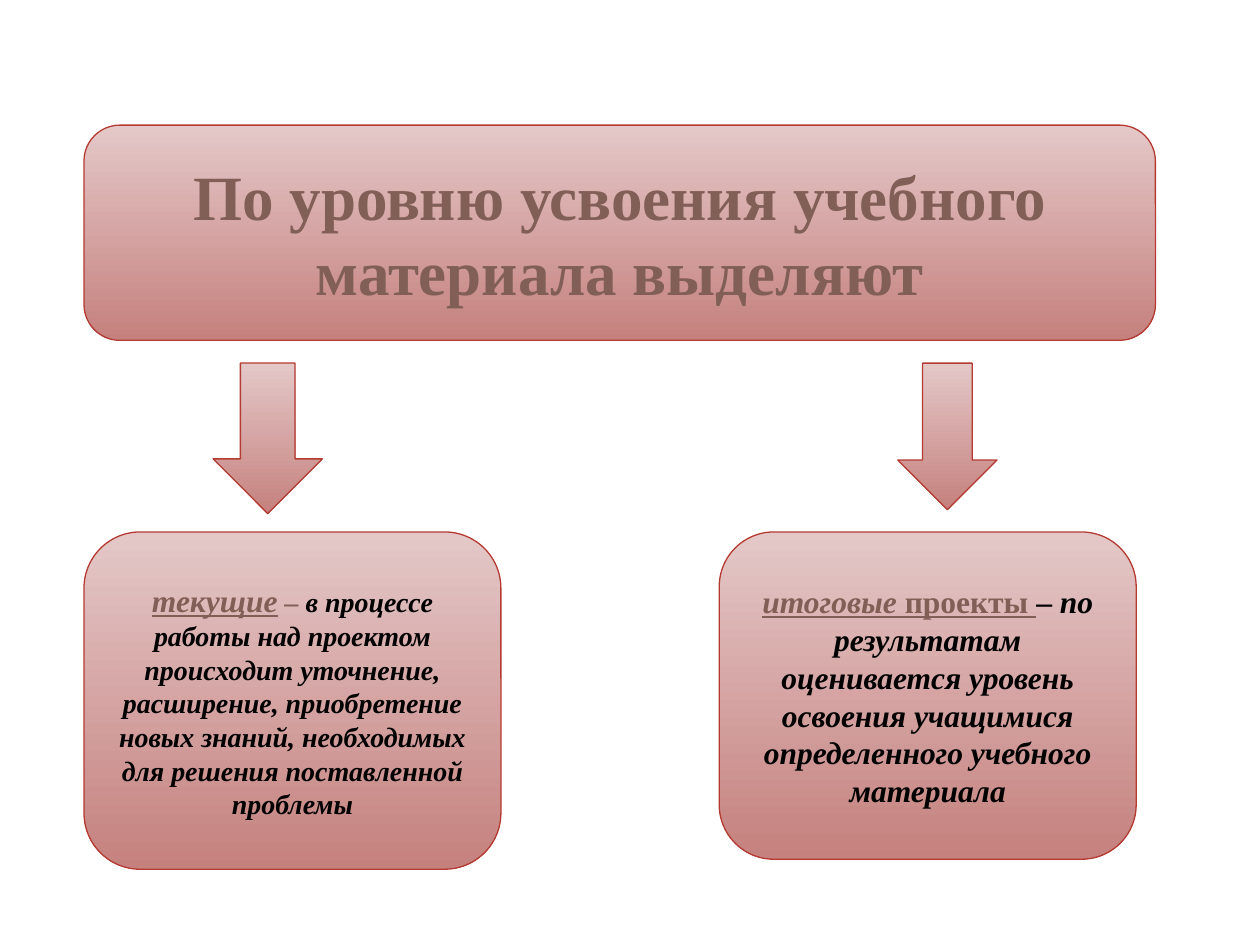
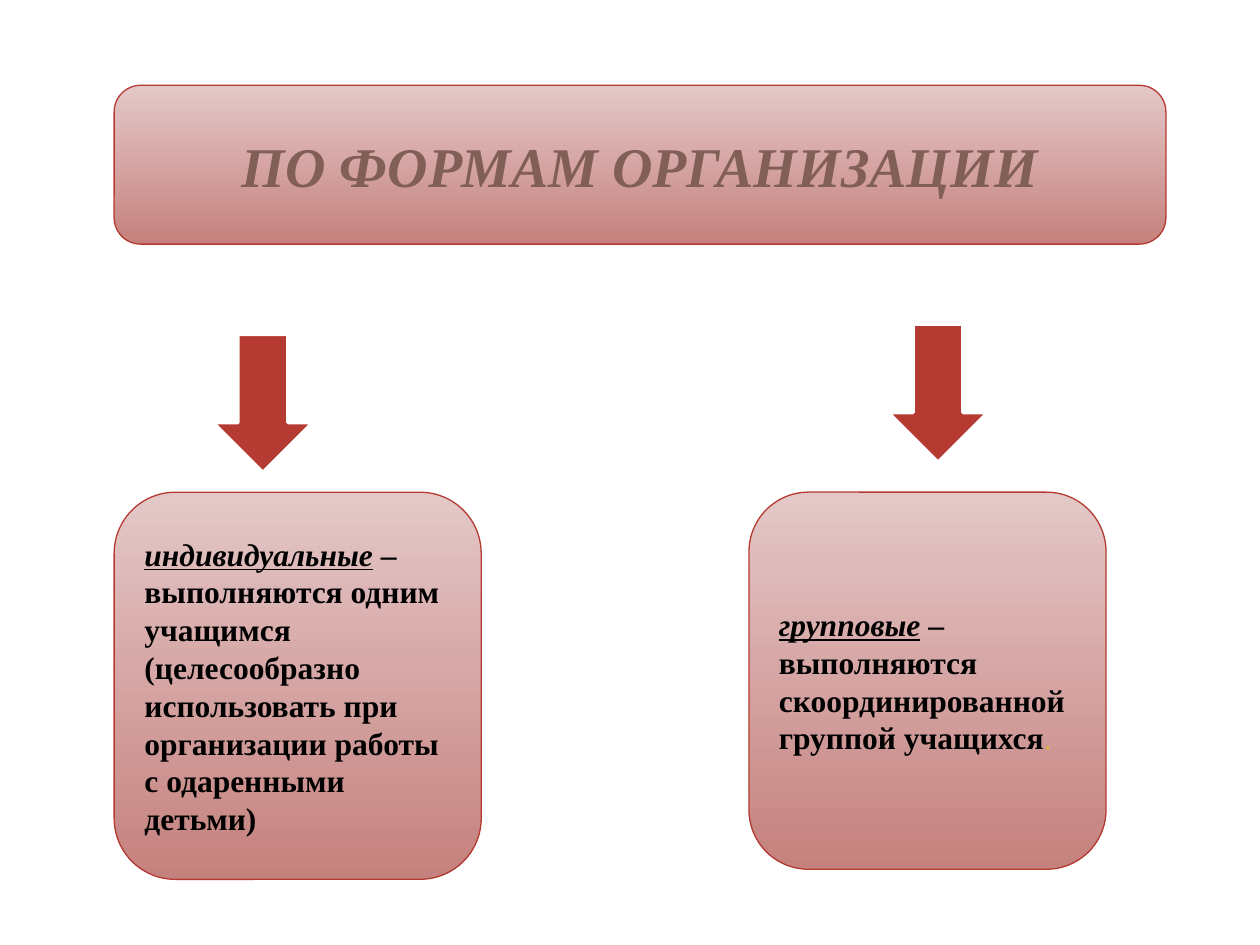
from dataclasses import dataclass, field

from pptx import Presentation
from pptx.dml.color import RGBColor
from pptx.enum import shapes, text
from pptx.util import Pt

# Shared look
FONT = "Times New Roman"
BLACK, WHITE, BROWN, RED, GOLD = "000000", "FFFFFF", "815F56", "B53A31", "D9B247"
GRADIENT = ("E4C8C8", "C5817E")
ROUND = shapes.MSO_SHAPE.ROUNDED_RECTANGLE
ARROW = shapes.MSO_SHAPE.DOWN_ARROW
CENTER, LEFT = text.PP_ALIGN.CENTER, text.PP_ALIGN.LEFT


@dataclass
class Box:
    left: float
    top: float
    width: float
    height: float

    def lengths(self) -> tuple:
        return Pt(self.left), Pt(self.top), Pt(self.width), Pt(self.height)


@dataclass
class Run:
    text: str
    size: float = 18
    color: str = BLACK
    bold: bool = True
    italic: bool = False
    underline: bool = False


@dataclass
class Branch:
    arrow: Box
    card: Box
    runs: list[Run]


@dataclass
class Scheme:
    heading: Run
    heading_box: Box
    branches: list[Branch] = field(default_factory=list)
    align: text.PP_ALIGN = CENTER
    solid_arrows: bool = False


def rgb(value: str) -> RGBColor:
    return RGBColor.from_string(value)


def add_run(p, content: str, *, size: float, color: str, bold: bool,
            italic: bool, underline: bool) -> None:
    r = p.add_run()
    r.text = content
    f = r.font
    f.name, f.size, f.color.rgb = FONT, Pt(size), rgb(color)
    f.bold, f.italic, f.underline = bold, italic, underline


def write(sp, runs: list[Run], align: text.PP_ALIGN) -> None:
    tf = sp.text_frame
    tf.word_wrap = True
    tf.auto_size = text.MSO_AUTO_SIZE.NONE
    tf.vertical_anchor = text.MSO_ANCHOR.MIDDLE
    p = tf.paragraphs[0]
    p.alignment = align
    for run in runs:
        add_run(p, run.text, size=run.size, color=run.color, bold=run.bold,
                italic=run.italic, underline=run.underline)


def add_panel(s, kind: shapes.MSO_SHAPE, box: Box, solid: bool = False):
    """Add a gradient shape with a red outline, or a solid red one edged in white."""
    sp = s.shapes.add_shape(kind, *box.lengths())
    sp.shadow.inherit = False
    if solid:
        sp.fill.solid()
        sp.fill.fore_color.rgb = rgb(RED)
    else:
        sp.fill.gradient()
        sp.fill.gradient_angle = 270
        for stop, color, position in zip(sp.fill.gradient_stops, GRADIENT, (0, 1)):
            stop.color.rgb, stop.position = rgb(color), position
    sp.line.color.rgb = rgb(WHITE if solid else RED)
    sp.line.width = Pt(2 if solid else 0.75)
    return sp


def add_heading(s, run: Run, box: Box) -> None:
    panel = add_panel(s, ROUND, box)
    title = s.shapes.title
    title.left, title.top, title.width, title.height = box.lengths()
    write(title, [run], CENTER)
    title._element.addprevious(panel._element)  # panel goes behind the title


def add_scheme(prs, scheme: Scheme) -> None:
    s = prs.slides.add_slide(prs.slide_layouts[5])
    add_heading(s, scheme.heading, scheme.heading_box)
    for branch in scheme.branches:
        add_panel(s, ARROW, branch.arrow, scheme.solid_arrows)
        write(add_panel(s, ROUND, branch.card), branch.runs, scheme.align)


SCHEMES = [
    # Levels of mastering the material
    Scheme(
        Run("По уровню усвоения учебного материала выделяют", 36, BROWN),
        Box(48, 71.5, 612.25, 123),
        [
            Branch(Box(121.75, 207.5, 62.5, 86), Box(48, 304, 238.25, 192.75), [
                Run("текущие", color=BROWN, italic=True, underline=True),
                Run(" ", 16, BROWN),
                Run("–", 16, BROWN, italic=True),
                Run(" в процессе работы над проектом происходит уточнение, "
                    "расширение, приобретение новых знаний, необходимых для "
                    "решения поставленной проблемы", 16, italic=True),
            ]),
            Branch(Box(513, 207.5, 56.75, 83.75), Box(411, 304, 238.25, 187), [
                Run("итоговые", color=BROWN, italic=True, underline=True),
                Run(" проекты ", color=BROWN, underline=True),
                Run("– "),
                Run("по результатам оценивается уровень освоения учащимися "
                    "определенного учебного материала", italic=True),
            ]),
        ],
    ),
    # Forms of organisation
    Scheme(
        Run("ПО ФОРМАМ ОРГАНИЗАЦИИ", 32, BROWN, italic=True),
        Box(65.25, 48.75, 601, 90.75),
        [
            Branch(Box(121.75, 191, 57, 79), Box(65.25, 281.25, 209.75, 221.25), [
                Run("индивидуальные", italic=True, underline=True),
                Run(" – выполняются одним учащимся (целесообразно использовать "
                    "при организации работы с одаренными детьми)"),
            ]),
            Branch(Box(507.5, 185.25, 57, 79), Box(428, 281.25, 204, 215.5), [
                Run("групповые", italic=True, underline=True),
                Run(" – выполняются скоординированной группой учащихся"),
                Run(".", color=GOLD, bold=False),
            ]),
        ],
        align=LEFT,
        solid_arrows=True,
    ),
]


def main() -> None:
    prs = Presentation()
    prs.slide_width, prs.slide_height = Pt(720), Pt(540)
    for scheme in SCHEMES:
        add_scheme(prs, scheme)
    prs.save("out.pptx")


if __name__ == "__main__":
    main()
